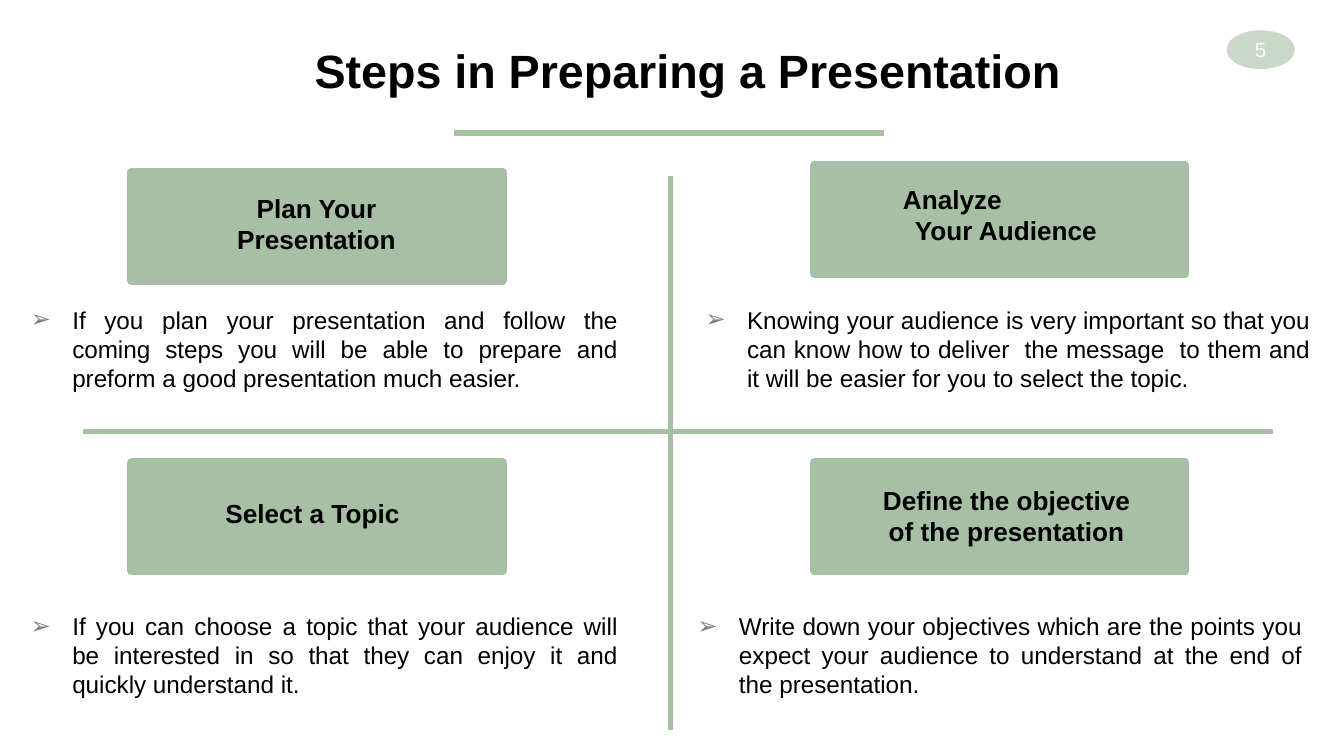
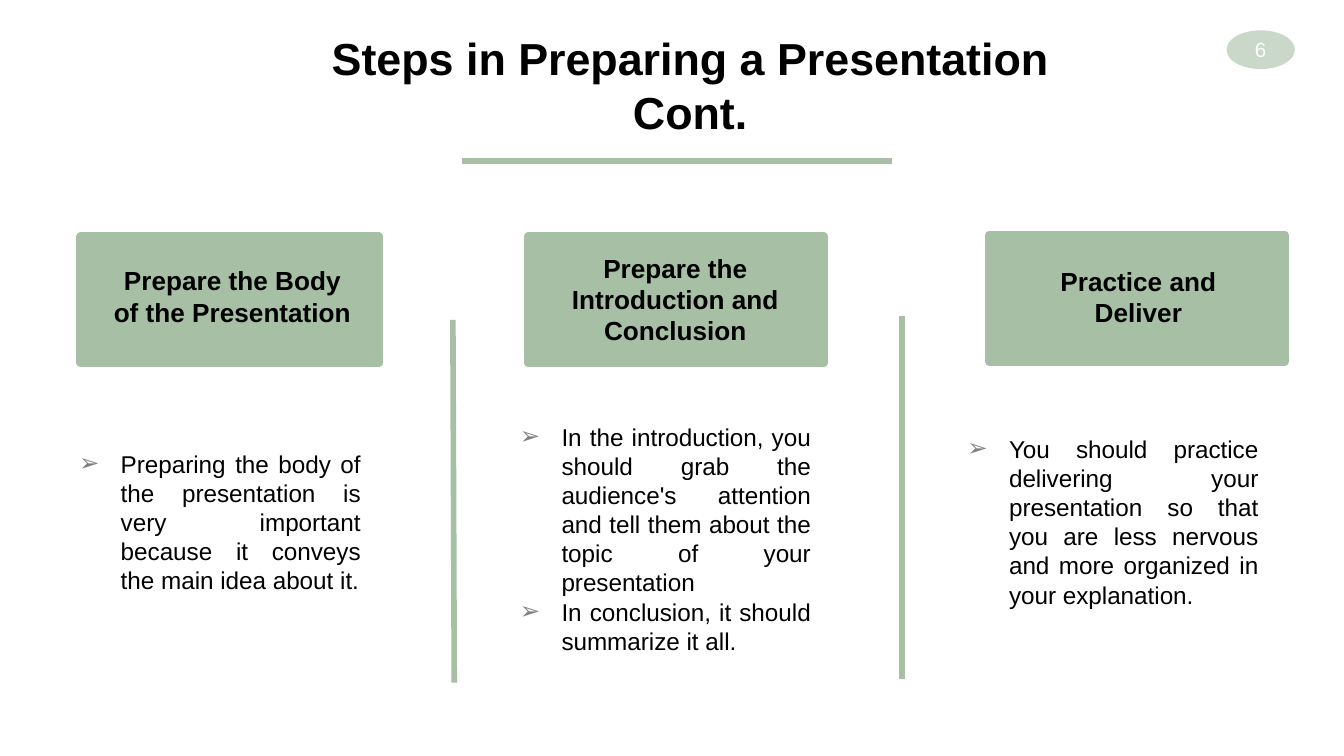
from dataclasses import dataclass
from typing import NamedTuple

from lxml.etree import SubElement
from pptx import Presentation
from pptx.dml.color import RGBColor
from pptx.enum.shapes import MSO_CONNECTOR as Connector, MSO_SHAPE as Preset
from pptx.enum.text import MSO_ANCHOR as Anchor, MSO_AUTO_SIZE as AutoSize, PP_ALIGN as Align
from pptx.oxml.ns import qn
from pptx.util import Pt

PX = 9144  # 100 px to the inch
SLIDE_WIDTH = 1000


@dataclass(frozen=True)
class Theme:
    font: str = "Arial"
    sage: str = "A6BFA5"
    pale_sage: str = "C9D8C8"
    ink: str = "000000"
    white: str = "FFFFFF"
    bullet: str = "808080"
    heading_size: int = 14
    body_size: int = 13
    number_size: int = 11
    rule_width: float = 3
    card_outline: float = 4.5
    badge_outline: float = 2
    bullet_indent: int = 31


THEME = Theme()


class Box(NamedTuple):
    left: int
    top: int
    width: int
    height: int


class Rule(NamedTuple):
    x1: int
    y1: int
    x2: int
    y2: int


class Line(NamedTuple):
    text: str
    align: Align = Align.CENTER
    indent: int = 0


class Step(NamedTuple):
    card: Box
    heading_box: Box
    heading: tuple[Line, ...]
    body_box: Box
    points: tuple[str, ...]
    anchor: Anchor = Anchor.MIDDLE


class Page(NamedTuple):
    number: int
    title: tuple[str, ...]
    title_box: Box
    title_size: int
    rules: tuple[Rule, ...]
    steps: tuple[Step, ...]


BADGE = Box(914, 24, 48, 26)


def card_at(left: int, top: int) -> Box:
    return Box(left, top, 276, 81)


def point_at(left: int, top: int, width: int, lines: int = 3) -> Box:
    return Box(left, top, width, 10 + 22 * lines)


PAGES = (
    Page(
        5, ("Steps in Preparing a Presentation",), Box(221, 26, 581, 52), 25,
        (Rule(338, 99, 658, 99), Rule(62, 321, 947, 321), Rule(499, 131, 499, 543)),
        (
            Step(card_at(98, 128), Box(138, 138, 195, 57), (Line("Plan Your Presentation"),),
                 point_at(13, 222, 456),
                 ("If you plan your presentation and follow the coming steps you will be "
                  "able to prepare and preform a good presentation much easier.",)),
            Step(card_at(606, 123), Box(651, 131, 195, 57),
                 (Line("Analyze", Align.LEFT, 11), Line("Your Audience")),
                 point_at(515, 222, 469),
                 ("Knowing your audience is very important so that you can know how to "
                  "deliver  the message  to them and it will be easier for you to select "
                  "the topic.",)),
            Step(card_at(98, 344), Box(135, 365, 195, 34), (Line("Select a Topic"),),
                 point_at(13, 450, 456),
                 ("If you can choose a topic that your audience will be interested in so "
                  "that they can enjoy it and quickly understand it.",)),
            Step(card_at(606, 344), Box(643, 355, 212, 57),
                 (Line("Define the objective of the presentation"),),
                 point_at(509, 450, 469),
                 ("Write down your objectives which are the points you expect your audience "
                  "to understand at the end of the presentation.",)),
        ),
    ),
    Page(
        6, ("Steps in Preparing a Presentation", "Cont."), Box(234, 18, 559, 91), 24,
        (Rule(344, 120, 664, 120), Rule(337, 238, 338, 508), Rule(671, 235, 671, 505)),
        (
            Step(Box(60, 176, 222, 94), Box(71, 192, 204, 104),
                 (Line("Prepare the Body of the Presentation"),),
                 point_at(49, 329, 229, 5),
                 ("Preparing the body of the presentation is very important because it "
                  "conveys the main idea about it.",), Anchor.TOP),
            Step(Box(393, 176, 220, 94), Box(409, 182, 187, 81),
                 (Line("Prepare the Introduction and Conclusion"),),
                 point_at(377, 309, 236, 8),
                 ("In the introduction, you should grab the audience's attention and tell "
                  "them about the topic of your presentation",
                  "In conclusion, it should summarize it all.")),
            Step(Box(736, 175, 220, 94), Box(776, 192, 142, 57),
                 (Line("Practice and Deliver"),),
                 point_at(710, 318, 236, 6),
                 ("You should practice delivering your presentation so that you are less "
                  "nervous and more organized in your explanation.",)),
        ),
    ),
)


# Text
def set_indent(paragraph, left: int, first: int = 0) -> None:
    properties = paragraph._p.get_or_add_pPr()
    properties.set("marL", str(left * PX))
    properties.set("indent", str(first * PX))


def add_bullet(paragraph) -> None:
    set_indent(paragraph, THEME.bullet_indent, -THEME.bullet_indent)
    properties = paragraph._p.get_or_add_pPr()
    color = SubElement(properties, qn("a:buClr"))
    SubElement(color, qn("a:srgbClr"), val=THEME.bullet)
    SubElement(properties, qn("a:buFont"), typeface=THEME.font)
    SubElement(properties, qn("a:buChar"), char="➢")


def write_lines(frame, lines: tuple[Line, ...], size: int, color: str,
                bold: bool = False, bulleted: bool = False) -> None:
    font_format = {"name": THEME.font, "size": Pt(size), "bold": bold}
    for index, line in enumerate(lines):
        paragraph = frame.add_paragraph() if index else frame.paragraphs[0]
        paragraph.alignment = line.align
        if bulleted:
            add_bullet(paragraph)
        elif line.indent:
            set_indent(paragraph, line.indent)
        run = paragraph.add_run()
        run.text = line.text
        for name, value in font_format.items():
            setattr(run.font, name, value)
        run.font.color.rgb = RGBColor.from_string(color)


def add_text(slide, box: Box, lines: tuple[Line, ...], size: int, bold: bool = False,
             bulleted: bool = False, wrap: bool = True, anchor: Anchor = Anchor.TOP) -> None:
    frame = slide.shapes.add_textbox(*(value * PX for value in box)).text_frame
    frame_format = {"word_wrap": wrap, "vertical_anchor": anchor,
                    "auto_size": AutoSize.SHAPE_TO_FIT_TEXT}
    for name, value in frame_format.items():
        setattr(frame, name, value)
    write_lines(frame, lines, size, THEME.ink, bold, bulleted)


# Shapes
def add_filled(slide, preset: Preset, box: Box, color: str, outline: float):
    shape = slide.shapes.add_shape(preset, *(value * PX for value in box))
    shape.shadow.inherit = False
    shape.fill.solid()
    shape.fill.fore_color.rgb = shape.line.color.rgb = RGBColor.from_string(color)
    shape.line.width = Pt(outline)
    return shape


def add_rule(slide, rule: Rule) -> None:
    connector = slide.shapes.add_connector(Connector.STRAIGHT, *(value * PX for value in rule))
    connector.line.color.rgb = RGBColor.from_string(THEME.sage)
    connector.line.width = Pt(THEME.rule_width)
    SubElement(connector._element.spPr, qn("a:effectLst"))


def add_step(slide, step: Step) -> None:
    add_filled(slide, Preset.RECTANGLE, step.card, THEME.sage, THEME.card_outline)
    add_text(slide, step.heading_box, step.heading, THEME.heading_size, bold=True,
             anchor=step.anchor)
    points = tuple(Line(point, Align.JUSTIFY) for point in step.points)
    add_text(slide, step.body_box, points, THEME.body_size, bulleted=True)


def add_badge(slide, number: int) -> None:
    badge = add_filled(slide, Preset.OVAL, BADGE, THEME.pale_sage, THEME.badge_outline)
    frame = badge.text_frame
    frame_format = {"margin_left": 0, "margin_right": 0, "margin_top": 0,
                    "margin_bottom": 0, "vertical_anchor": Anchor.MIDDLE}
    for name, value in frame_format.items():
        setattr(frame, name, value)
    write_lines(frame, (Line(str(number)),), THEME.number_size, THEME.white)


# Slides
def add_page(presentation, page: Page) -> None:
    slide = presentation.slides.add_slide(presentation.slide_layouts[6])
    for rule in page.rules:
        add_rule(slide, rule)
    title = tuple(Line(text) for text in page.title)
    add_text(slide, page.title_box, title, page.title_size, bold=True, wrap=False)
    for step in page.steps:
        add_step(slide, step)
    add_badge(slide, page.number)


def main() -> None:
    presentation = Presentation()
    presentation.slide_width = SLIDE_WIDTH * PX
    presentation.slide_height = SLIDE_WIDTH * PX * 9 // 16
    for page in PAGES:
        add_page(presentation, page)
    presentation.save("out.pptx")


if __name__ == "__main__":
    main()
